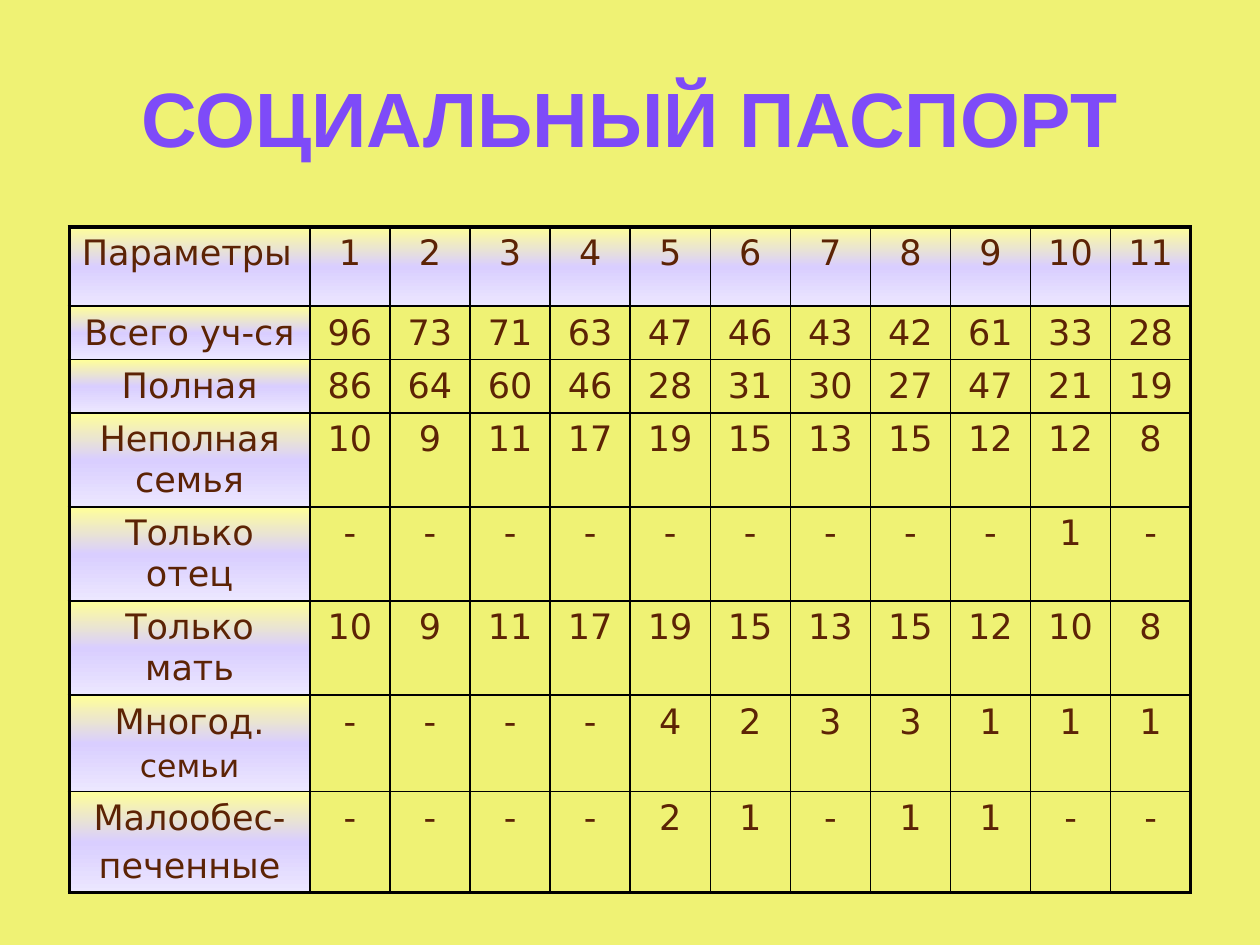
"""Build the social passport slide: a title and a table of families by grade."""
import pptx
import pptx.util
import pptx.dml.color
import pptx.enum.text
import pptx.oxml.ns
from lxml import etree

Inches, Pt = pptx.util.Inches, pptx.util.Pt
CENTER = pptx.enum.text.PP_ALIGN.CENTER
LEFT = pptx.enum.text.PP_ALIGN.LEFT

TITLE = "СОЦИАЛЬНЫЙ ПАСПОРТ"
ROWS = [
    (0.63, [("Параметры", 20)], "1 2 3 4 5 6 7 8 9 10 11"),
    (0.38, [("Всего уч-ся", 20)], "96 73 71 63 47 46 43 42 61 33 28"),
    (0.35, [("Полная", 20)], "86 64 60 46 28 31 30 27 47 21 19"),
    (0.72, [("Неполная семья", 20)], "10 9 11 17 19 15 13 15 12 12 8"),
    (0.73, [("Только отец", 20)], "- - - - - - - - - 1 -"),
    (0.72, [("Только мать", 20)], "10 9 11 17 19 15 13 15 12 10 8"),
    (0.75, [("Многод.", 20), ("семьи", 18)], "- - - - 4 2 3 3 1 1 1"),
    (0.74, [("Малообес-", 20), ("печенные", 20)], "- - - - 2 1 - 1 1 - -"),
]
GRADES = 11
TABLE_WIDTH, LABEL_WIDTH = 8.9, 1.91
HEADING_STOPS = [(0, "FFFF99"), (50, "D9CEFF"), (100, "ECE7FF")]
BACKGROUND, TITLE_COLOR, TEXT_COLOR, BORDER = "EFF274", "7E4BF8", "5C2305", "000000"
OUTER, INNER = 2.25, 1


def color(hex_value):
    return pptx.dml.color.RGBColor.from_string(hex_value)


def add_run(paragraph, text, font_name, size, hex_value, bold=False):
    run = paragraph.add_run()
    run.text = text
    run.font.name = font_name
    run.font.size = Pt(size)
    run.font.bold = bold
    run.font.color.rgb = color(hex_value)


def child(parent, tag, **attributes):
    element = etree.SubElement(parent, pptx.oxml.ns.qn(f"a:{tag}"))
    for key, value in attributes.items():
        element.set(key, str(value))
    return element


def style_cell(cell, row, column):
    properties = cell._tc.get_or_add_tcPr()
    outer_sides = {"lnL": column == 0, "lnR": column == GRADES,
                   "lnT": row == 0, "lnB": row == len(ROWS) - 1}
    for side, is_outer in outer_sides.items():
        line = child(properties, side, w=int(Pt(OUTER if is_outer else INNER)))
        child(child(line, "solidFill"), "srgbClr", val=BORDER)
    if row and column:
        child(properties, "noFill")
        return
    gradient = child(properties, "gradFill", rotWithShape=1)
    stops = child(gradient, "gsLst")
    for position, hex_value in HEADING_STOPS:
        child(child(stops, "gs", pos=position * 1000), "srgbClr", val=hex_value)
    child(gradient, "lin", ang=90 * 60000, scaled=1)


def fill_cell(cell, lines, alignment):
    for index, (text, size) in enumerate(lines):
        frame = cell.text_frame
        paragraph = frame.add_paragraph() if index else frame.paragraphs[0]
        paragraph.alignment = alignment
        if index:
            paragraph.space_before = Pt(size * 0.2)
        add_run(paragraph, text, "DejaVu Sans", size, TEXT_COLOR)


def add_title(slide):
    title = slide.shapes.add_textbox(Inches(0.5), Inches(0.3), Inches(9), Inches(1.25))
    frame = title.text_frame
    frame.word_wrap = True
    frame.vertical_anchor = pptx.enum.text.MSO_ANCHOR.MIDDLE
    frame.paragraphs[0].alignment = CENTER
    add_run(frame.paragraphs[0], TITLE, "Arial", 44, TITLE_COLOR, bold=True)


def add_passport(slide):
    height = sum(row_height for row_height, _, _ in ROWS)
    table = slide.shapes.add_table(
        len(ROWS), GRADES + 1, Inches(0.55), Inches(1.8),
        Inches(TABLE_WIDTH), Inches(height)).table
    table.first_row = table.horz_banding = False
    grade_width = (TABLE_WIDTH - LABEL_WIDTH) / GRADES
    for index, column in enumerate(table.columns):
        column.width = Inches(grade_width if index else LABEL_WIDTH)
    for row, (row_height, label, counts) in enumerate(ROWS):
        table.rows[row].height = Inches(row_height)
        contents = [label] + [[(count, 20)] for count in counts.split()]
        for column, lines in enumerate(contents):
            cell = table.cell(row, column)
            fill_cell(cell, lines, CENTER if row or column else LEFT)
            style_cell(cell, row, column)


def main():
    deck = pptx.Presentation()
    deck.slide_width, deck.slide_height = Inches(10), Inches(7.5)
    slide = deck.slides.add_slide(deck.slide_layouts[6])
    slide.background.fill.solid()
    slide.background.fill.fore_color.rgb = color(BACKGROUND)
    add_passport(slide)
    add_title(slide)
    deck.save("out.pptx")


if __name__ == "__main__":
    main()
